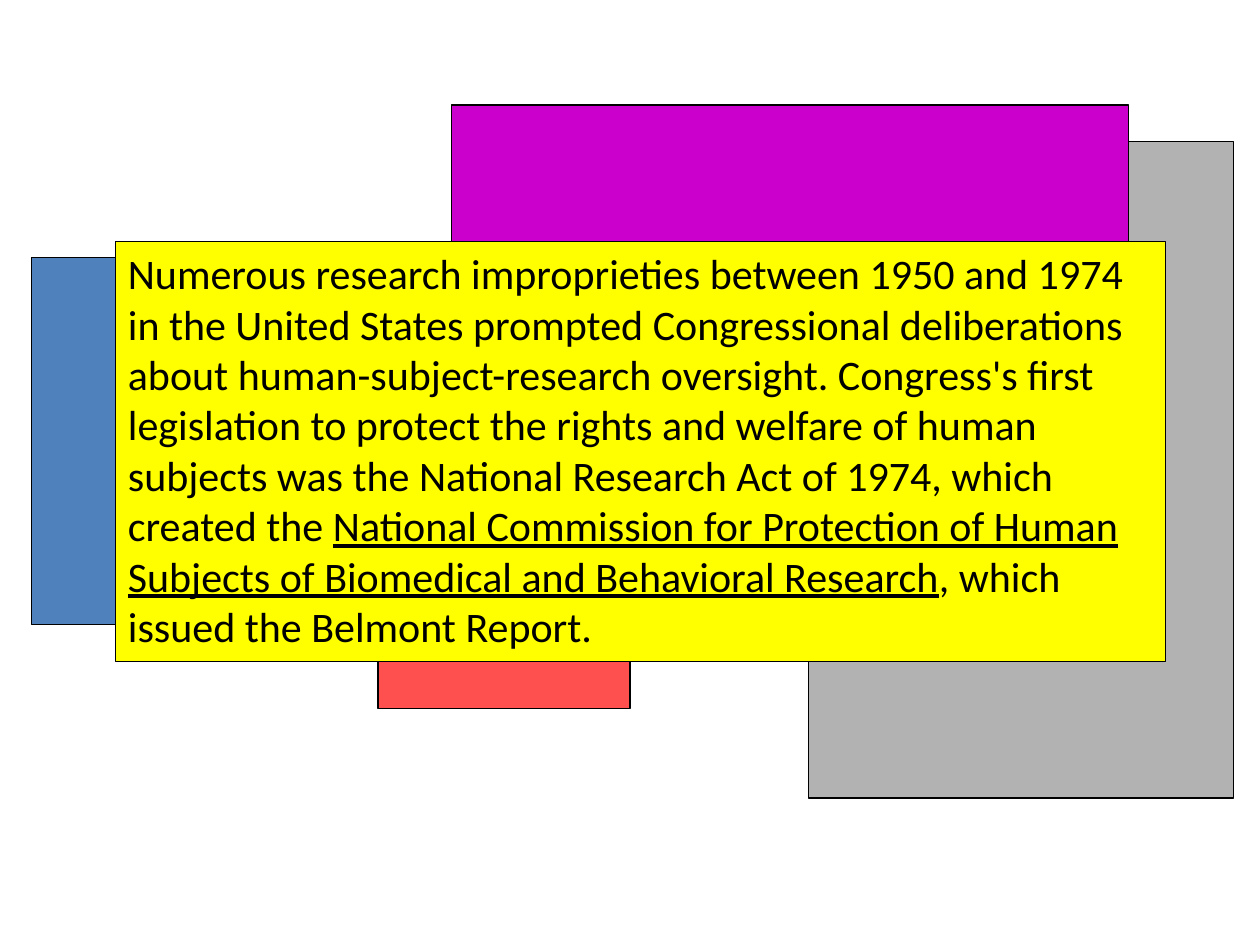
from pptx import Presentation
from pptx.dml.color import RGBColor
from pptx.enum.shapes import MSO_SHAPE as SHAPE
from pptx.enum.text import MSO_ANCHOR as ANCHOR, MSO_AUTO_SIZE as AUTO_SIZE, PP_ALIGN as ALIGN
from pptx.util import Pt

COLORS = {
    "blue": "4F81BD",
    "gray": "B2B2B2",
    "purple": "CC00CC",
    "red": "FF5050",
    "yellow": "FFFF00",
    "black": "000000",
}

# Color and box (left, top, width, height) in points, back to front
BACK_PANELS = [
    ("blue", (18, 147, 360, 210)),
    ("gray", (462, 81, 243, 375)),
    ("purple", (258, 60, 387, 249)),
    ("red", (216, 225, 144, 180)),
]
TEXT_BOX = (66, 138, 600, 240)

# Text and whether it is underlined
PASSAGE = [
    ("Numerous research improprieties between 1950 and 1974 in the United States "
     "prompted Congressional deliberations about human-subject-research oversight. "
     "Congress's first legislation to protect the rights and welfare of human subjects "
     "was the National Research Act of 1974, which created the ", False),
    ("National Commission for Protection of Human Subjects of Biomedical and "
     "Behavioral Research", True),
    (", which issued the Belmont Report.", False),
]


def rgb(name):
    return RGBColor.from_string(COLORS[name])


def add_panel(slide, box, color):
    s = slide.shapes.add_shape(SHAPE.RECTANGLE, *(Pt(v) for v in box))
    s.shadow.inherit = False
    s.fill.solid()
    s.fill.fore_color.rgb = rgb(color)
    s.line.color.rgb = rgb("black")
    s.line.width = Pt(0.75)
    return s


def add_passage(slide, box):
    tf = add_panel(slide, box, "yellow").text_frame
    tf.word_wrap = True
    tf.auto_size = AUTO_SIZE.SHAPE_TO_FIT_TEXT
    tf.vertical_anchor = ANCHOR.TOP
    p = tf.paragraphs[0]
    p.alignment = ALIGN.LEFT
    p.font.name = "Calibri"
    p.font.size = Pt(24)
    p.font.color.rgb = rgb("black")
    for text, underlined in PASSAGE:
        r = p.add_run()
        r.text = text
        if underlined:
            r.font.underline = True


def main():
    prs = Presentation()
    prs.slide_width, prs.slide_height = Pt(720), Pt(540)
    slide = prs.slides.add_slide(prs.slide_layouts[6])
    for color, box in BACK_PANELS:
        add_panel(slide, box, color)
    add_passage(slide, TEXT_BOX)
    prs.save("out.pptx")


if __name__ == "__main__":
    main()
